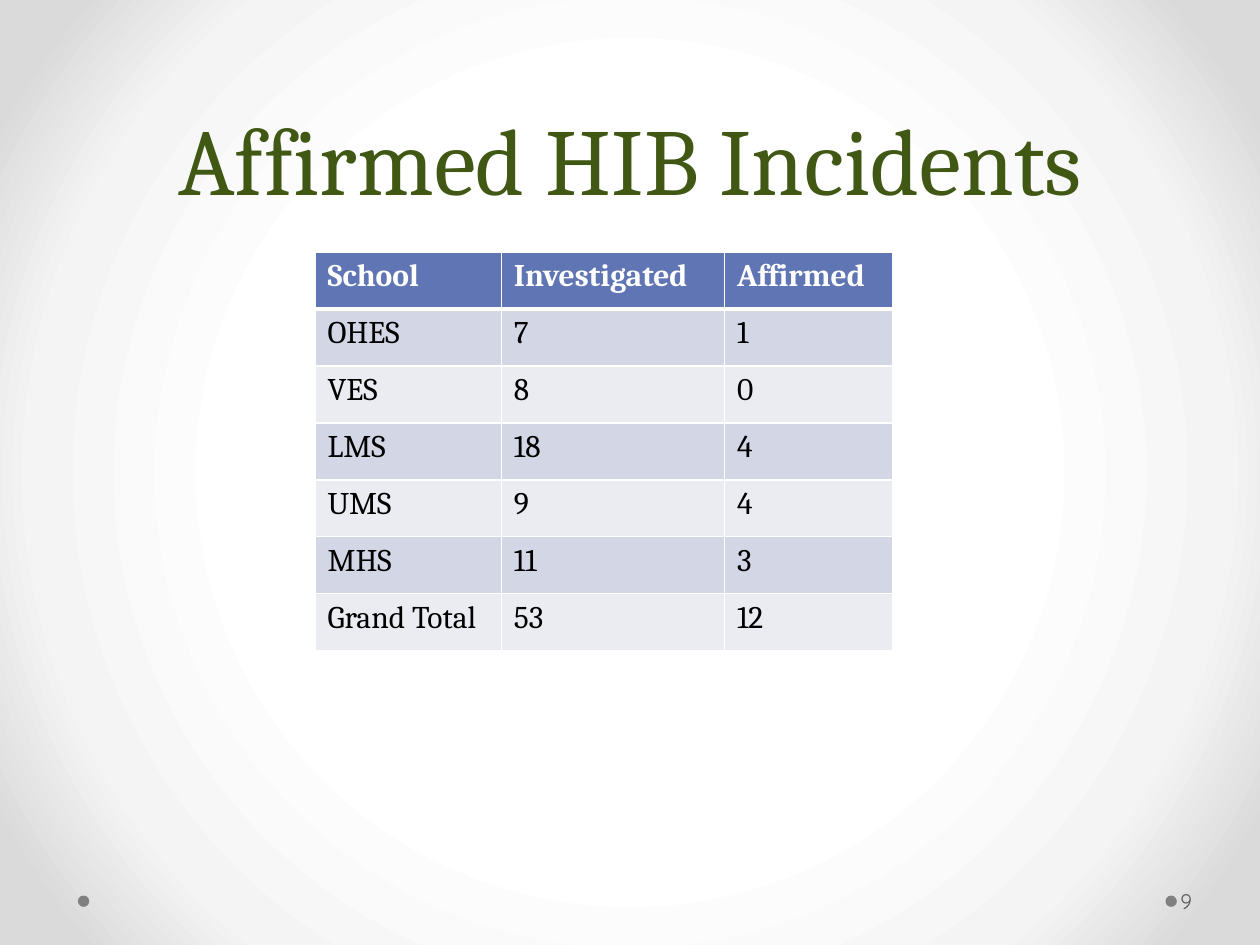
from pptx import Presentation
from pptx.dml.color import RGBColor
from pptx.enum.shapes import MSO_SHAPE
from pptx.enum.text import MSO_ANCHOR, PP_ALIGN
from pptx.oxml import parse_xml
from pptx.oxml.ns import nsdecls, qn
from pptx.util import Pt

COLORS = {
    "title": "405814", "number": "595959", "dot": "808080",
    "header": "6076B4", "band_dark": "D2D6E5", "band_light": "EAECF2",
    "white": "FFFFFF", "black": "000000",
}
BACKDROP = [(50, "FFFFFF"), (76, "F4F4F4"), (92, "DADADA")]
ROWS = [
    ("School", "Investigated", "Affirmed"),
    ("OHES", "7", "1"),
    ("VES", "8", "0"),
    ("LMS", "18", "4"),
    ("UMS", "9", "4"),
    ("MHS", "11", "3"),
    ("Grand Total", "53", "12"),
]
COL_WIDTHS = [106.5, 127.5, 96]
ROW_HEIGHT = 32.57


def rgb(name):
    return RGBColor.from_string(COLORS[name])


def write(tf, text, color, **font):
    p = tf.paragraphs[0]
    r = p.add_run()
    r.text = text
    r.font.color.rgb = rgb(color)
    for key, value in font.items():
        setattr(r.font, key, value)
    return p


def add_backdrop(slide):
    slide.background.fill.gradient()
    grad = slide.element.find(".//" + qn("a:gradFill"))
    stops = "".join(
        f'<a:gs pos="{pos * 1000}"><a:srgbClr val="{color}"/></a:gs>'
        for pos, color in BACKDROP)
    grad.getparent().replace(grad, parse_xml(
        f'<a:gradFill {nsdecls("a")} rotWithShape="1"><a:gsLst>{stops}</a:gsLst>'
        '<a:path path="circle"><a:fillToRect l="50000" t="50000" r="50000" b="50000"/>'
        '</a:path></a:gradFill>'))


def add_text_box(slide, x, y, w, h, **frame):
    tf = slide.shapes.add_textbox(Pt(x), Pt(y), Pt(w), Pt(h)).text_frame
    tf.word_wrap = True
    for key, value in frame.items():
        setattr(tf, key, value)
    return tf


def add_title(slide, x, y, w, h):
    tf = add_text_box(slide, x, y, w, h, vertical_anchor=MSO_ANCHOR.BOTTOM)
    p = write(tf, "Affirmed HIB Incidents", "title", size=Pt(54), name="Cambria")
    p.alignment = PP_ALIGN.CENTER
    p.line_spacing = Pt(58)


def set_borders(cell, bottom):
    """Draw white cell borders, 1 pt except for the given bottom width."""
    tc_pr = cell._tc.get_or_add_tcPr()
    for i, (side, width) in enumerate(zip("LRTB", (1, 1, 1, bottom))):
        tc_pr.insert(i, parse_xml(
            f'<a:ln{side} {nsdecls("a")} w="{Pt(width)}"><a:solidFill>'
            f'<a:srgbClr val="{COLORS["white"]}"/></a:solidFill></a:ln{side}>'))


def add_incident_table(slide, x, y):
    table = slide.shapes.add_table(
        len(ROWS), len(COL_WIDTHS), Pt(x), Pt(y),
        Pt(sum(COL_WIDTHS)), Pt(ROW_HEIGHT * len(ROWS))).table
    for col, width in zip(table.columns, COL_WIDTHS):
        col.width = Pt(width)
    for i, values in enumerate(ROWS):
        table.rows[i].height = Pt(ROW_HEIGHT)
        header = i == 0
        fill = "header" if header else "band_dark" if i % 2 else "band_light"
        for j, text in enumerate(values):
            cell = table.cell(i, j)
            cell.fill.solid()
            cell.fill.fore_color.rgb = rgb(fill)
            set_borders(cell, 3 if header else 1)
            write(cell.text_frame, text, "white" if header else "black",
                  size=Pt(18), name="Cambria", bold=header)


def add_footer(slide, y, h):
    dot = 6.5
    for x in (666, 44.5):
        s = slide.shapes.add_shape(
            MSO_SHAPE.OVAL, Pt(x), Pt(y + (h - dot) / 2), Pt(dot), Pt(dot))
        s.shadow.inherit = False
        s.fill.solid()
        s.fill.fore_color.rgb = rgb("dot")
        s.line.fill.background()
    tf = add_text_box(slide, 672.5, y, 44, h, vertical_anchor=MSO_ANCHOR.MIDDLE,
                      margin_left=Pt(2), margin_right=Pt(3.6))
    write(tf, "9", "number", size=Pt(12), name="Quicksand")


def main():
    prs = Presentation()
    prs.slide_width, prs.slide_height = Pt(720), Pt(540)
    slide = prs.slides.add_slide(prs.slide_layouts[6])
    add_backdrop(slide)
    add_title(slide, 36, 0, 648, 126)
    add_incident_table(slide, 180, 144)
    add_footer(slide, 500.5, 29)
    prs.save("out.pptx")


if __name__ == "__main__":
    main()
